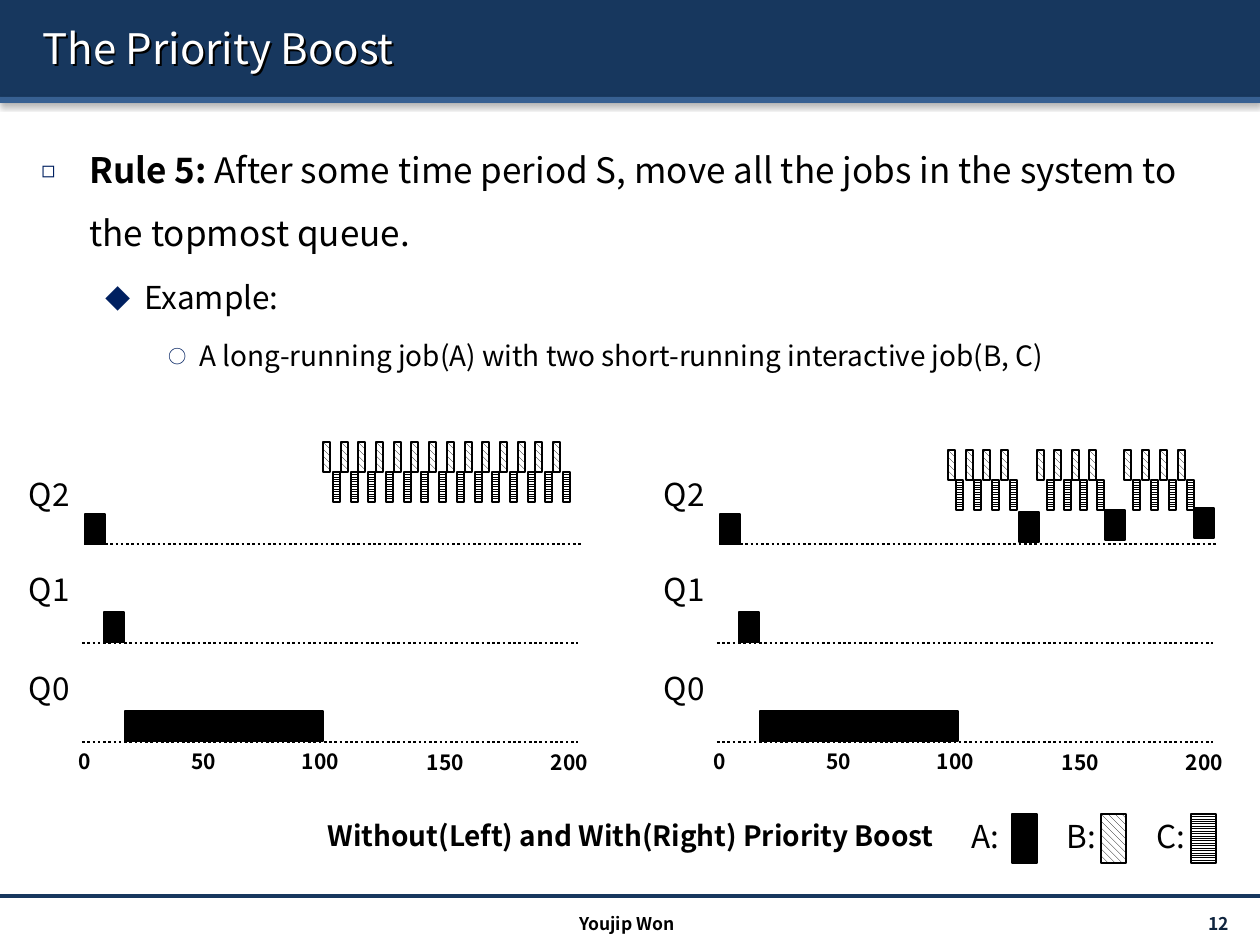
from lxml import etree
from pptx import Presentation
from pptx.dml.color import RGBColor
from pptx.enum.dml import MSO_LINE, MSO_PATTERN
from pptx.enum.shapes import MSO_CONNECTOR, MSO_SHAPE
from pptx.enum.text import MSO_ANCHOR, PP_ALIGN
from pptx.oxml.ns import qn
from pptx.util import Emu, Pt

RECT = MSO_SHAPE.RECTANGLE
STRAIGHT = MSO_CONNECTOR.STRAIGHT
DOTS = MSO_LINE.ROUND_DOT
TOP, MIDDLE = MSO_ANCHOR.TOP, MSO_ANCHOR.MIDDLE
LEFT, CENTER, RIGHT = PP_ALIGN.LEFT, PP_ALIGN.CENTER, PP_ALIGN.RIGHT
# Fill of each job's bars: None is solid black
JOBS = {
    "A": None,
    "B": MSO_PATTERN.WIDE_DOWNWARD_DIAGONAL,
    "C": MSO_PATTERN.LIGHT_HORIZONTAL,
}

FACE = "Noto Sans CJK KR"
BLACK, WHITE, NAVY, BLUE = "000000", "FFFFFF", "17375E", "376092"
MARK, INK = "002060", "0F243E"
SCALE = 914400 / 126

# Bursts of short jobs: (first left, last left, count)
LONE = {"B": [(323, 553, 14)], "C": [(333, 563, 14)]}
BOOST = {
    "B": [(948, 1001, 4), (1037, 1089, 4), (1124, 1178, 4)],
    "C": [(956, 1010, 4), (1047, 1097, 4), (1133, 1187, 4)],
}
# Queue rows: name, label top, axis start, axis end, axis height
ROWS = [
    ("Q2", 469, 84, 581, 544),
    ("Q1", 564, 82, 578, 643),
    ("Q0", 663, 82, 578, 742),
]
# Runs of job A: left, top, width
RUNS = [(85, 514, 20), (104, 612, 20), (125, 711, 198)]
TICKS = [("0", 66, 742, 30), ("50", 174, 742, 59), ("100", 282, 742, 77),
         ("150", 407, 743, 77), ("200", 531, 743, 77)]


def px(n):
    return Emu(round(n * SCALE))


def color(code):
    return RGBColor.from_string(code)


def node(up, tag, **vals):
    return etree.SubElement(up, qn(tag), {k: str(v) for k, v in vals.items()})


def shade(shape, alpha, blur, dist, angle):
    fx = node(shape._element.spPr, "a:effectLst")
    cast = node(fx, "a:outerShdw", blurRad=blur, dist=dist, dir=angle,
                algn="t", rotWithShape=0)
    node(node(cast, "a:srgbClr", val=BLACK), "a:alpha", val=alpha)


def run(para, text, size, **fmt):
    item = para.add_run()
    item.text = text
    ink = fmt.pop("ink", BLACK)
    for key, val in {"name": FACE, "size": Pt(size), **fmt}.items():
        setattr(item.font, key, val)
    item.font.color.rgb = color(ink)


def frame(shapes, box, anchor=TOP):
    item = shapes.add_textbox(*map(px, box))
    item.text_frame.word_wrap = True
    item.text_frame.vertical_anchor = anchor
    return item


def label(shapes, box, text, size, align=CENTER, anchor=TOP, **fmt):
    item = frame(shapes, box, anchor)
    para = item.text_frame.paragraphs[0]
    para.alignment = align
    run(para, text, size, **fmt)
    return item


def band(shapes, box, fill):
    strip = shapes.add_shape(RECT, *map(px, box))
    strip.fill.solid()
    strip.fill.fore_color.rgb = color(fill)
    strip.line.fill.background()
    shade(strip, 38000, 39370, 20320, 5400000)


def bar(shapes, box, job):
    item = shapes.add_shape(RECT, *map(px, box))
    item.shadow.inherit = False
    if JOBS[job] is None:
        item.fill.solid()
    else:
        item.fill.patterned()
        item.fill.pattern = JOBS[job]
        item.fill.back_color.rgb = color(WHITE)
    item.fill.fore_color.rgb = color(BLACK)
    item.line.color.rgb = color(BLACK)
    item.line.width = Pt(0.75)


def rule(shapes, x1, x2, y, ink, width, dash=None):
    item = shapes.add_connector(STRAIGHT, px(x1), px(y), px(x2), px(y))
    item.line.color.rgb = color(ink)
    item.line.width = Pt(width)
    if dash:
        item.line.dash_style = dash
    node(item._element.spPr, "a:effectLst")


def point(para, level, sign, scale, left, hang, size, parts):
    para.level = level
    para.line_spacing = 1.5
    if level:
        para.space_before = Pt(size * 0.2)
    props = para._p.get_or_add_pPr()
    props.set("marL", str(px(left)))
    props.set("indent", str(-px(hang)))
    node(node(props, "a:buClr"), "a:srgbClr", val=MARK)
    node(props, "a:buSzPct", val=scale * 1000)
    node(props, "a:buFont", typeface=FACE)
    node(props, "a:buChar", char=sign)
    for text, bold in parts:
        run(para, text, size, bold=bold)


def body(shapes):
    text = frame(shapes, (29, 121, 1211, 759)).text_frame
    points = [
        (0, "◻", 65, 48, 48, 20,
         [("Rule 5:", True),
          (" After some time period S, move all the jobs in the system"
           " to the topmost queue.", False)]),
        (1, "◆", 80, 103, 39, 18, [("Example:", False)]),
        (2, "○", 65, 158, 31, 16,
         [("A long-running job(A) with two short-running interactive"
           " job(B, C)", False)]),
    ]
    for i, spec in enumerate(points):
        para = text.add_paragraph() if i else text.paragraphs[0]
        point(para, *spec)


def chart(slide, shift, top, bursts, boosts=()):
    shapes = slide.shapes.add_group_shape().shapes
    # Queues and time axis
    for name, y, x1, x2, base in ROWS:
        label(shapes, (shift - 5, y, 87, 50), name, 18, RIGHT)
        rule(shapes, shift + x1, shift + x2, base, BLACK, 1.5, DOTS)
    for text, x, y, w in TICKS:
        label(shapes, (shift + x, y, w, 38), text, 12, bold=True)
    # Job A, then the interactive jobs
    for x, y, w in RUNS:
        bar(shapes, (shift + x, y, w, 30), "A")
    for row, job in enumerate(bursts):
        for first, last, count in bursts[job]:
            for i in range(count):
                x = first + round((last - first) * i / (count - 1))
                bar(shapes, (x, top + 30 * row, 7, 30), job)
    for x, y in boosts:
        bar(shapes, (x, y, 20, 30), "A")


def legend(slide):
    shapes = slide.shapes.add_group_shape().shapes
    keys = [("A: ", 953, 72, 1012), ("B:", 1052, 59, 1101),
            ("C:", 1141, 59, 1191)]
    for text, x, w, left in keys:
        bar(shapes, (left, 814, 25, 49), text[0])
        label(shapes, (x, 811, w, 50), text, 18)


def main():
    deck = Presentation()
    deck.slide_width, deck.slide_height = px(1260), px(945)
    slide = deck.slides.add_slide(deck.slide_layouts[6])
    shapes = slide.shapes

    # Header and footer
    band(shapes, (0, 0, 1260, 97), NAVY)
    band(shapes, (0, 97, 1260, 6), BLUE)
    rule(shapes, 0, 1260, 896, NAVY, 2)
    title = label(shapes, (30, 7, 1211, 81), "The Priority Boost", 24,
                  LEFT, MIDDLE, ink=WHITE)
    shade(title, 100000, 0, 20320, 2700000)
    label(shapes, (1098, 908, 147, 30), "12 ", 10, RIGHT, MIDDLE,
          ink=INK, bold=True)
    label(shapes, (418, 907, 418, 30), "Youjip Won", 10, bold=True)

    # Content
    body(shapes)
    chart(slide, 0, 442, LONE)
    chart(slide, 635, 450, BOOST, [(1019, 512), (1105, 510), (1194, 508)])
    label(shapes, (244, 812, 774, 47),
          "Without(Left) and With(Right) Priority Boost", 16, bold=True)
    legend(slide)
    deck.save("out.pptx")


if __name__ == "__main__":
    main()
